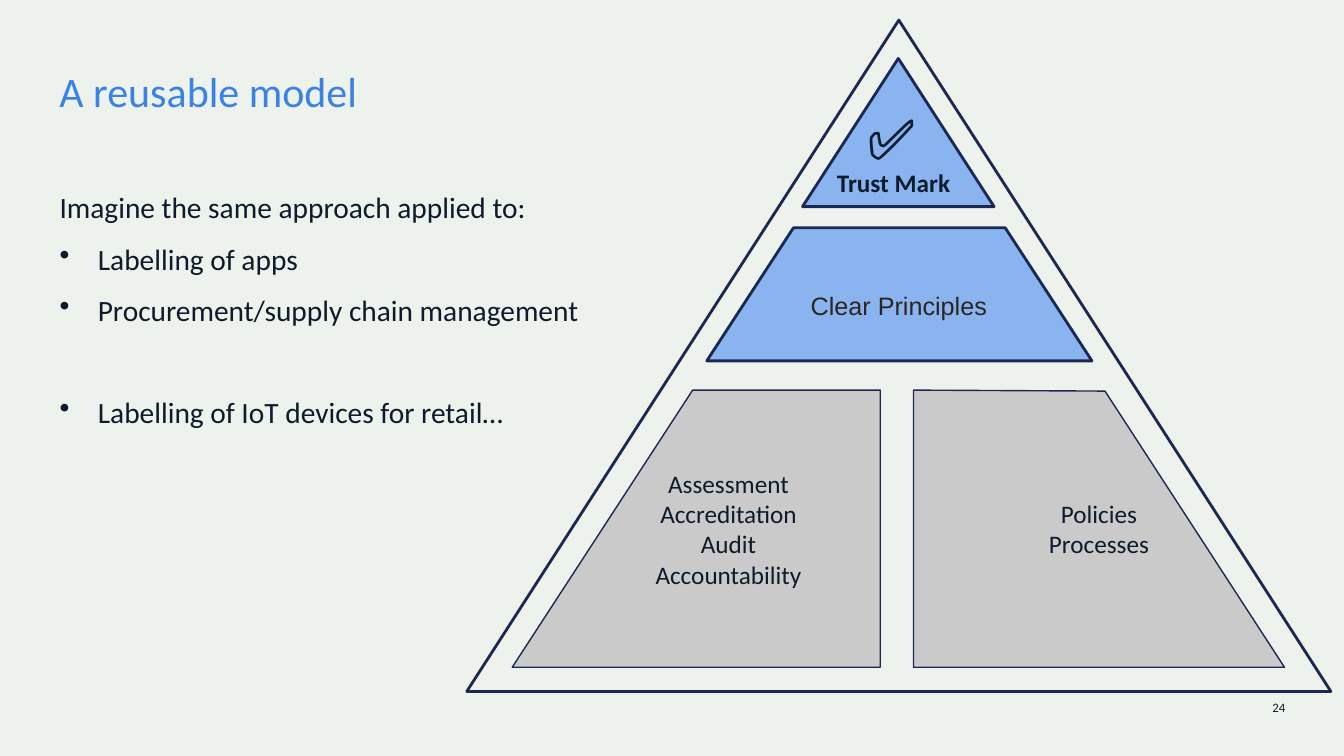
from dataclasses import dataclass

import lxml.etree
import pptx
import pptx.dml.color
import pptx.enum.shapes
import pptx.enum.text
import pptx.oxml.ns
import pptx.util

Inches = pptx.util.Inches
Align = pptx.enum.text.PP_ALIGN
Anchor = pptx.enum.text.MSO_ANCHOR
Point = tuple[float, float]
Box = tuple[float, float, float, float]


@dataclass(frozen=True)
class Theme:
    background: str = "EEF2EC"
    heading: str = "3A82E4"
    ink: str = "0C1C2C"
    principles_ink: str = "2C2620"
    outline: str = "1B2853"
    blue: str = "89B4EF"
    grey: str = "CACACA"
    font: str = "Calibri"
    principles_font: str = "Arial"
    title_size: float = 30
    body_size: float = 21
    label_size: float = 18
    tick_size: float = 40
    number_size: float = 9.2
    line_spacing: float = 1.06
    paragraph_gap: float = 10
    bullet_indent: float = 0.38


@dataclass(frozen=True)
class Line:
    text: str
    bulleted: bool = False
    space_before: float = 0


@dataclass(frozen=True)
class Tier:
    """One outlined part of the pyramid, given by its corners."""
    corners: tuple[Point, ...]
    fill: str
    line_width: float


THEME = Theme()
APEX_X = 8.91
TRIANGLES: list[tuple[Box, str | None]] = [
    ((4.63, 0.2, 8.57, 6.66), None),
    ((7.96, 0.58, 1.9, 1.47), THEME.blue),
]
TIERS = [
    Tier(((7.01, 3.58), (7.87, 2.26), (9.97, 2.26), (10.83, 3.58)), THEME.blue, 2),
    Tier(((5.08, 6.62), (6.87, 3.87), (8.73, 3.87), (8.73, 6.62)), THEME.grey, 1),
    Tier(((12.74, 6.62), (10.96, 3.88), (9.06, 3.87), (9.06, 6.62)), THEME.grey, 1),
]
BODY = [
    Line("Imagine the same approach applied to:"),
    Line("Labelling of apps", True, THEME.paragraph_gap),
    Line("Procurement/supply chain management", True, THEME.paragraph_gap),
    Line("Labelling of IoT devices for retail…", True, 46),
]


def rgb(colour: str) -> pptx.dml.color.RGBColor:
    return pptx.dml.color.RGBColor.from_string(colour)


def add_bullet(paragraph) -> None:
    properties = paragraph._p.get_or_add_pPr()
    indent = Inches(THEME.bullet_indent)
    properties.set("marL", str(indent))
    properties.set("indent", str(-indent))
    bullet = lxml.etree.SubElement(properties, pptx.oxml.ns.qn("a:buChar"))
    bullet.set("char", "•")


def add_text(slide, box: Box, lines: list[Line], *, size: float = THEME.label_size,
             colour: str = THEME.ink, font: str = THEME.font, bold: bool = False,
             align: Align = Align.LEFT, anchor: Anchor = Anchor.TOP,
             inset: float = 0, line_spacing: float | None = None) -> None:
    frame = slide.shapes.add_textbox(*map(Inches, box)).text_frame
    frame.word_wrap = True
    frame.vertical_anchor = anchor
    frame.margin_left = frame.margin_right = Inches(inset)
    frame.margin_top = frame.margin_bottom = Inches(inset)
    for index, line in enumerate(lines):
        paragraph = frame.add_paragraph() if index else frame.paragraphs[0]
        if line.bulleted:
            add_bullet(paragraph)
        paragraph.alignment = align
        if line_spacing:
            paragraph.line_spacing = line_spacing
        if line.space_before:
            paragraph.space_before = pptx.util.Pt(line.space_before)
        run = paragraph.add_run()
        run.text = line.text
        run.font.name = font
        run.font.size = pptx.util.Pt(size)
        run.font.bold = bold
        run.font.color.rgb = rgb(colour)


def style_outline(shape, fill: str | None, line_width: float) -> None:
    shape.shadow.inherit = False
    if fill:
        shape.fill.solid()
        shape.fill.fore_color.rgb = rgb(fill)
    else:
        shape.fill.background()
    shape.line.color.rgb = rgb(THEME.outline)
    shape.line.width = pptx.util.Pt(line_width)


def add_triangle(slide, box: Box, fill: str | None) -> None:
    kind = pptx.enum.shapes.MSO_SHAPE.ISOSCELES_TRIANGLE
    style_outline(slide.shapes.add_shape(kind, *map(Inches, box)), fill, 2)


def add_tier(slide, tier: Tier) -> None:
    start, *others = [(Inches(x), Inches(y)) for x, y in tier.corners]
    builder = slide.shapes.build_freeform(*start)
    builder.add_line_segments(others, close=True)
    style_outline(builder.convert_to_shape(), tier.fill, tier.line_width)


def add_pyramid(slide) -> None:
    for box, fill in TRIANGLES:
        add_triangle(slide, box, fill)
    for tier in TIERS:
        add_tier(slide, tier)
    add_text(slide, (8.55, 0.98, 0.73, 0.84), [Line("✅")],
             size=THEME.tick_size, inset=0.05)
    add_text(slide, (8.25, 1.61, 1.38, 0.41), [Line("Trust Mark")], bold=True, inset=0.05)
    centred = {"align": Align.CENTER, "anchor": Anchor.MIDDLE}
    add_text(slide, (APEX_X - 1.33, 2.82, 2.67, 0.41), [Line("Clear Principles")],
             font=THEME.principles_font, colour=THEME.principles_ink, inset=0.05, **centred)
    assurance = ["Assessment", "Accreditation", "Audit", "Accountability"]
    add_text(slide, (5.4, 4.63, 3.65, 1.23), [Line(text) for text in assurance], **centred)
    add_text(slide, (9.06, 4.94, 3.68, 0.61), [Line("Policies"), Line("Processes")], **centred)


def main() -> None:
    deck = pptx.Presentation()
    deck.slide_width, deck.slide_height = Inches(13.33), Inches(7.5)
    slide = deck.slides.add_slide(deck.slide_layouts[6])
    slide.background.fill.solid()
    slide.background.fill.fore_color.rgb = rgb(THEME.background)
    add_text(slide, (0.59, 0.62, 12.16, 0.63), [Line("A reusable model")],
             size=THEME.title_size, colour=THEME.heading, line_spacing=THEME.line_spacing)
    add_text(slide, (12.25, 6.94, 0.5, 0.17), [Line("24")],
             size=THEME.number_size, align=Align.RIGHT)
    add_pyramid(slide)
    add_text(slide, (0.59, 1.86, 6.08, 4.88), BODY,
             size=THEME.body_size, line_spacing=THEME.line_spacing)
    deck.save("out.pptx")


if __name__ == "__main__":
    main()
